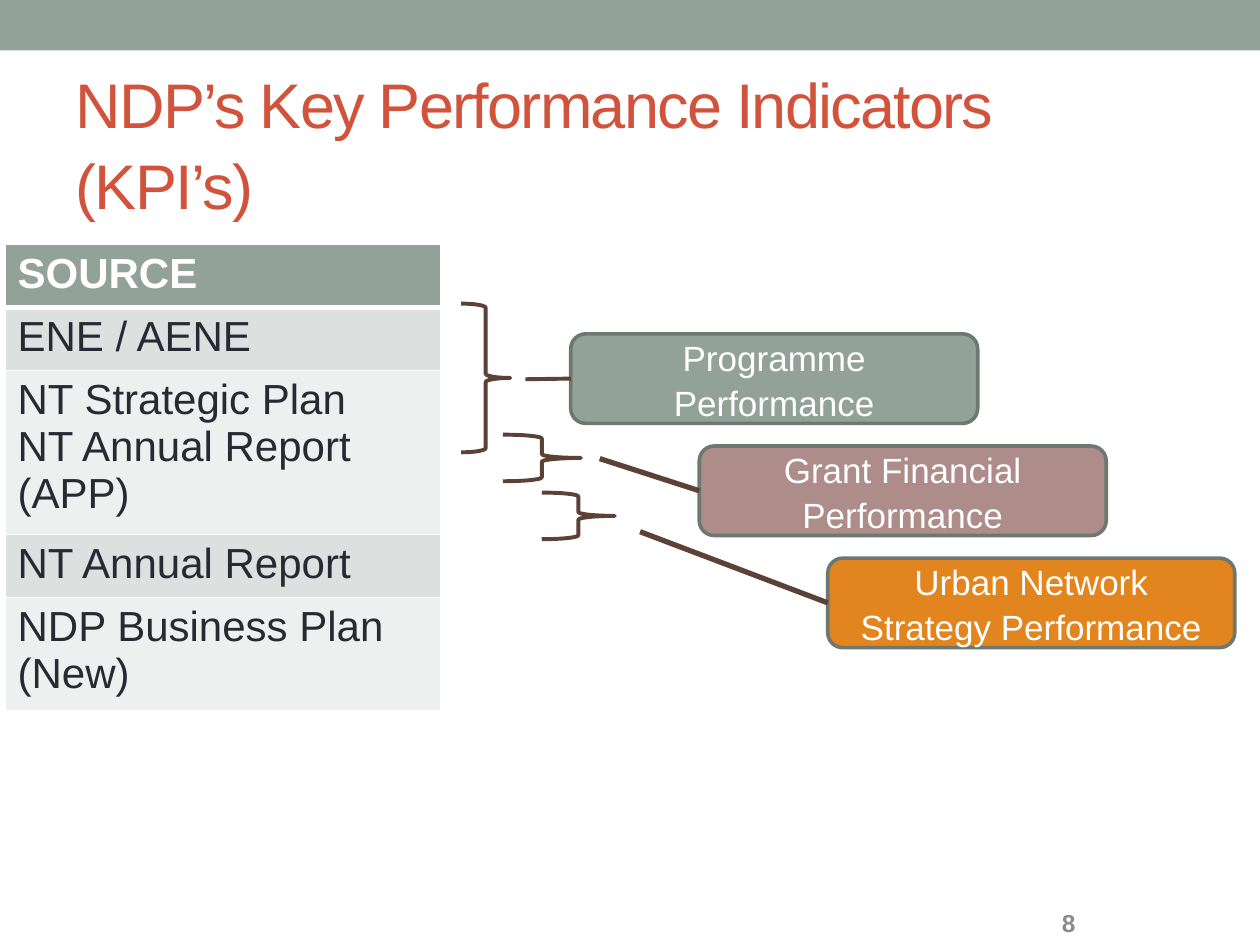
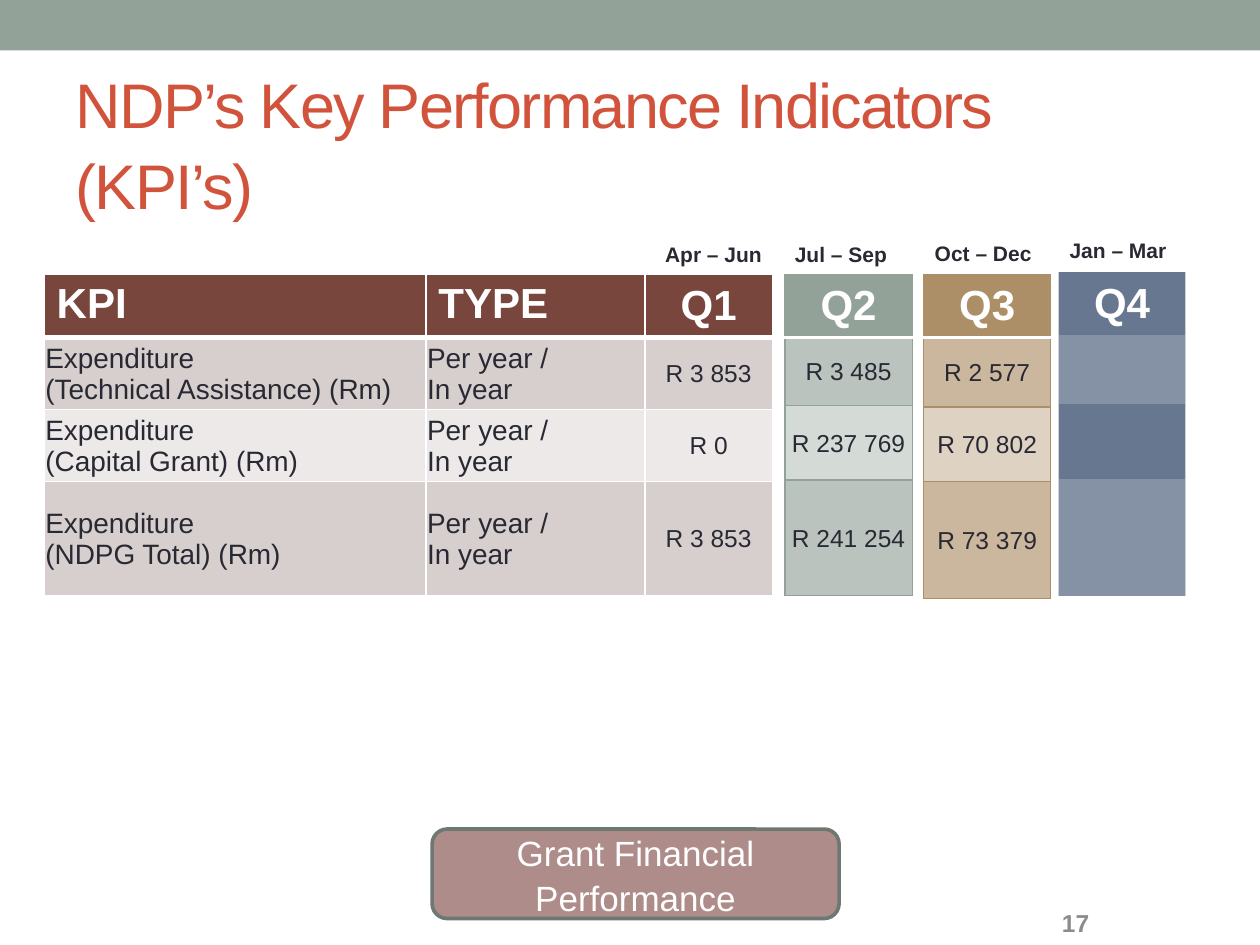
from dataclasses import dataclass

from lxml import etree
from pptx import Presentation
from pptx.dml.color import RGBColor
from pptx.enum.shapes import MSO_CONNECTOR, MSO_SHAPE
from pptx.enum.text import MSO_ANCHOR, MSO_AUTO_SIZE, PP_ALIGN
from pptx.oxml.ns import qn
from pptx.util import Inches, Pt

LEFT, CENTER = PP_ALIGN.LEFT, PP_ALIGN.CENTER
TOP, MIDDLE = MSO_ANCHOR.TOP, MSO_ANCHOR.MIDDLE
FIXED = MSO_AUTO_SIZE.NONE
RECT, ROUND = MSO_SHAPE.RECTANGLE, MSO_SHAPE.ROUNDED_RECTANGLE
BRACE, LINE = MSO_SHAPE.RIGHT_BRACE, MSO_CONNECTOR.STRAIGHT
PLAIN = "{2D5ABB26-0587-4C30-8999-92F81FD0307C}"

WIDE, HIGH = Inches(10), Inches(7.5)
COLS, ROWS = 100, 75


@dataclass(frozen=True)
class Theme:
    font: str = "Arial"
    sage: str = "93A299"
    red: str = "D2533C"
    ink: str = "292934"
    white: str = "FFFFFF"
    gray: str = "8C8C8C"
    rose: str = "AD8C89"
    orange: str = "E2851E"
    edge: str = "6D7871"
    brown: str = "5C4236"
    rust: str = "79463D"
    tan: str = "AD8F67"
    blue: str = "677790"
    mist: str = "CDD0D6"
    title: float = 36
    head: float = 24
    label: float = 20
    body: float = 16
    small: float = 14
    date: float = 12
    lead: float = 1.07


@dataclass(frozen=True)
class Area:
    """A place on the grid of 100 columns by 75 rows."""
    col: float
    row: float
    wide: float
    high: float

    def box(self) -> tuple[int, int, int, int]:
        return across(self.col), down(self.row), across(self.wide), down(self.high)


@dataclass(frozen=True)
class Rule:
    color: str
    width: float


@dataclass(frozen=True)
class Grid:
    col: float
    row: float
    widths: tuple[float, ...]
    heights: tuple[float, ...]
    cells: tuple[tuple[str, ...], ...]
    fills: tuple[str, ...]
    edge: Rule
    head: Rule | None
    sizes: tuple[float, ...]
    mids: tuple[int, ...] = ()
    tight: bool = True
    sides: bool = False


@dataclass(frozen=True)
class Link:
    """A brace and the line that leads from it to its box."""
    brace: Area
    start: tuple[float, float]
    width: float


T = Theme()
HEAD = "NDP’s Key Performance Indicators (KPI’s)"
BOX_W, BOX_H = 32.3, 7.1
GRANT = "Grant Financial Performance"
BOXES = (("Programme Performance", T.sage), (GRANT, T.rose),
         ("Urban Network Strategy Performance", T.orange))
LINKS = (Link(Area(36.6, 24.1, 3.9, 11.8), (41.7, 30.1), 2.25),
         Link(Area(39.9, 34.5, 6.2, 3.7), (47.6, 36.4), 3),
         Link(Area(43, 39.1, 5.8, 3.7), (50.8, 42.2), 3))
DATES = (("Apr – Jun", 51.8, 18.7), ("Jul – Sep", 62.1, 18.7),
         ("Oct – Dec", 73.2, 18.6), ("Jan – Mar", 83.9, 18.4))


def across(cols: float) -> int:
    return round(WIDE * cols / COLS)


def down(rows: float) -> int:
    return round(HIGH * rows / ROWS)


def tint(color: str, share: float) -> str:
    """Mix a colour with white."""
    parts = (int(color[i:i + 2], 16) for i in (0, 2, 4))
    return "".join(f"{round(255 + (part - 255) * share):02X}" for part in parts)


def rgb(color: str) -> RGBColor:
    return RGBColor.from_string(color)


def write(frame, text: str, size: float, color: str, bold: bool = False,
          align=LEFT, anchor=MIDDLE, lead: float | None = None) -> None:
    frame.word_wrap = True
    frame.vertical_anchor = anchor
    for i, line in enumerate(text.split("\n")):
        para = frame.add_paragraph() if i else frame.paragraphs[0]
        para.alignment = align
        if lead:
            para.line_spacing = lead
        run = para.add_run()
        run.text = line
        run.font.name = T.font
        run.font.size = Pt(size)
        run.font.bold = bold
        run.font.color.rgb = rgb(color)


def note(slide, area: Area, text: str, size: float, color: str, anchor) -> None:
    box = slide.shapes.add_textbox(*area.box())
    write(box.text_frame, text, size, color, bold=True, anchor=anchor)


def draw(slide, kind, area: Area, fill: str | None = None, rule: Rule | None = None):
    shape = slide.shapes.add_shape(kind, *area.box())
    shape.shadow.inherit = False
    if fill:
        shape.fill.solid()
        shape.fill.fore_color.rgb = rgb(fill)
    else:
        shape.fill.background()
    if rule:
        shape.line.color.rgb = rgb(rule.color)
        shape.line.width = Pt(rule.width)
    else:
        shape.line.fill.background()
    return shape


def label(slide, col: float, row: float, text: str, fill: str) -> None:
    area = Area(col, row, BOX_W, BOX_H)
    shape = draw(slide, ROUND, area, fill, Rule(T.edge, 2.08))
    write(shape.text_frame, text, T.label, T.white, align=CENTER, lead=T.lead)


def join(slide, start: tuple[float, float], end: tuple[float, float], rule: Rule) -> None:
    line = slide.shapes.add_connector(LINE, across(start[0]), down(start[1]),
                                      across(end[0]), down(end[1]))
    line.line.color.rgb = rgb(rule.color)
    line.line.width = Pt(rule.width)
    etree.SubElement(line.element.spPr, qn("a:effectLst"))


def border(cell, rules: dict[str, Rule | None]) -> None:
    """Put the side lines ahead of the cell's fill, in schema order."""
    props = cell.fill._xPr
    spot = 0
    for side in "LRTB":
        rule = rules.get(side)
        if rule:
            line = etree.Element(qn(f"a:ln{side}"), w=str(Pt(rule.width)))
            fill = etree.SubElement(line, qn("a:solidFill"))
            etree.SubElement(fill, qn("a:srgbClr"), val=rule.color)
            props.insert(spot, line)
            spot += 1


def fill_cell(cell, grid: Grid, r: int, c: int) -> None:
    top, mid = r == 0, c in grid.mids
    if grid.tight and not top:
        cell.margin_left = cell.margin_right = cell.margin_top = Inches(0.01)
        cell.margin_bottom = 0
    text = grid.cells[r][c]
    if text:
        write(cell.text_frame, text, T.head if top else grid.sizes[c],
              T.white if top else T.ink, bold=top, align=CENTER if mid else LEFT)
    cell.vertical_anchor = MIDDLE if mid or (grid.tight and not top) else TOP
    cell.fill.solid()
    cell.fill.fore_color.rgb = rgb(grid.fills[r])
    rules = {"L": grid.edge, "R": grid.edge}
    if not grid.sides:
        rules["T"] = grid.head if r == 1 else grid.edge
        rules["B"] = grid.head if top else grid.edge
    border(cell, rules)


def tabulate(slide, grid: Grid) -> None:
    area = Area(grid.col, grid.row, sum(grid.widths), sum(grid.heights))
    frame = slide.shapes.add_table(len(grid.heights), len(grid.widths), *area.box())
    table = frame.table
    table.first_row = table.horz_banding = False
    for style in frame.element.iter(qn("a:tableStyleId")):
        style.text = PLAIN
    for col, wide in zip(table.columns, grid.widths):
        col.width = across(wide)
    for row, high in zip(table.rows, grid.heights):
        row.height = down(high)
    for r in range(len(grid.heights)):
        for c in range(len(grid.widths)):
            fill_cell(table.cell(r, c), grid, r, c)


def start(deck, page: str):
    """Add a slide with the band, title and page number."""
    slide = deck.slides.add_slide(deck.slide_layouts[5])
    draw(slide, RECT, Area(0, 0, COLS, 4), T.sage)
    title = slide.shapes.title
    title.left, title.top, title.width, title.height = Area(5, 5.8, 90, 10.8).box()
    write(title.text_frame, HEAD, T.title, T.red, lead=T.lead)
    title.text_frame.auto_size = FIXED
    for run in title.text_frame.paragraphs[0].runs:
        run.font._element.set("spc", "-100")
    note(slide, Area(83.3, 71.4, 11.7, 3.6), page, T.small, T.gray, MIDDLE)
    return slide


def sources(deck) -> None:
    slide = start(deck, "8")
    names = ("SOURCE", "ENE / AENE", "NT Strategic Plan\nNT Annual Report (APP)",
             "NT Annual Report", "NDP Business Plan (New)")
    tabulate(slide, Grid(0.4, 19.4, (34.6,), (4.1,) * 5, tuple((n,) for n in names),
                         (T.sage, *("DCE0DE", "EEF0EF") * 2), Rule(T.white, 1),
                         Rule(T.white, 3), (T.head,), tight=False))
    for i, ((text, fill), link) in enumerate(zip(BOXES, LINKS)):
        col, row = 45.3 + 10.2 * i, 26.5 + 8.9 * i
        draw(slide, BRACE, link.brace, rule=Rule(T.brown, 2.25))
        label(slide, col, row, text, fill)
        join(slide, link.start, (col, row + BOX_H / 2), Rule(T.brown, link.width))


def quarter(col: float, row: float, heights: tuple[float, ...], texts: tuple[str, ...],
            color: str, shares: tuple[float, float], last: bool = False) -> Grid:
    dark, light = (tint(color, share) for share in shares)
    return Grid(col, row, (10.1,), heights, tuple((t,) for t in texts),
                (color, dark, light, dark), Rule(T.mist if last else color, 0.75),
                None if last else Rule(T.white, 2.08), (T.small,), (0,), sides=last)


def spending(deck) -> None:
    slide = start(deck, "17")
    items = (("Technical Assistance", "R 3 853"), ("Capital Grant", "R 0"),
             ("NDPG Total", "R 3 853"))
    rows = tuple((f"Expenditure\n({name}) (Rm)", "Per year /\nIn year", sum_)
                 for name, sum_ in items)
    tall, both = (4.3, 5.5, 5.9, 9.3), (0.64, 0.4)
    grids = (
        Grid(3.5, 21.8, (30.3, 17.4, 10.1), (4.5, 5.7, 5.7, 9.1),
             (("KPI", "TYPE", "Q1"), *rows), (T.rust, "D7CFCE", "ECE9E8", "D7CFCE"),
             Rule(T.white, 1), Rule(T.white, 3), (T.body, T.body, T.small), (2,)),
        quarter(62.3, 21.8, (4.3, 5.4, 5.9, 9.2),
                ("Q2", "R 3 485", "R 237 769", "R 241 254"), T.sage, both),
        quarter(73.3, 21.8, tall, ("Q3", "R 2 577", "R 70 802", "R 73 379"), T.tan, both),
        quarter(84, 21.6, tall, ("Q4", "", "", ""), T.blue, (0.8, 1), last=True))
    for grid in grids:
        tabulate(slide, grid)
    for text, col, row in DATES:
        note(slide, Area(col, row, 10.2, 3), text, T.date, T.ink, TOP)
    label(slide, 34.3, 65.8, GRANT, T.rose)


def main() -> None:
    deck = Presentation()
    deck.slide_width, deck.slide_height = WIDE, HIGH
    sources(deck)
    spending(deck)
    deck.save("out.pptx")


if __name__ == "__main__":
    main()
